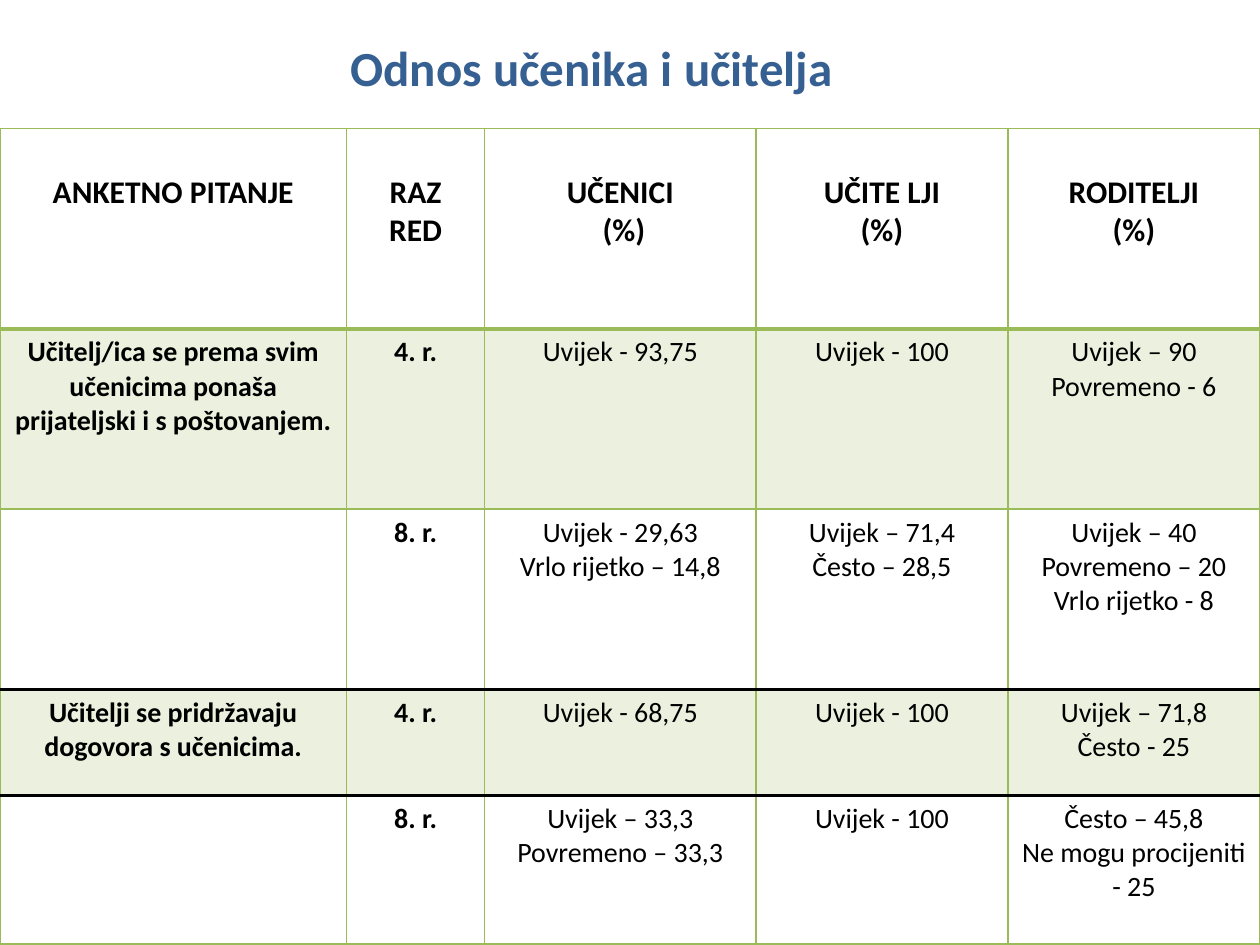
import pptx
import pptx.dml.color
import pptx.enum.text
import pptx.oxml
import pptx.oxml.ns
import pptx.util

Pt = pptx.util.Pt
RGBColor = pptx.dml.color.RGBColor

BLUE = RGBColor(0x37, 0x60, 0x92)
GREEN = RGBColor(0x9B, 0xBB, 0x59)
PALE_GREEN = RGBColor(0xEB, 0xF1, 0xDE)
BLACK = RGBColor(0, 0, 0)
FONT = "Calibri"

COLUMN_WIDTHS = [198, 79, 155, 144, 144]
ROW_HEIGHTS = [114.5, 103, 103, 60.5, 85]
ROWS = [
    ["ANKETNO PITANJE", "RAZ\nRED", "UČENICI\n (%)", "UČITE LJI\n(%)", "RODITELJI\n(%)"],
    ["Učitelj/ica se prema svim učenicima ponaša prijateljski i s poštovanjem.",
     "4. r.", "Uvijek - 93,75", "Uvijek - 100", "Uvijek – 90\nPovremeno - 6"],
    ["", "8. r.", "Uvijek - 29,63\nVrlo rijetko – 14,8", "Uvijek – 71,4\nČesto – 28,5",
     "Uvijek – 40\nPovremeno – 20\nVrlo rijetko - 8"],
    ["Učitelji se pridržavaju dogovora s učenicima.",
     "4. r.", "Uvijek - 68,75", "Uvijek - 100", "Uvijek – 71,8\nČesto - 25"],
    ["", "8. r.", "Uvijek – 33,3\nPovremeno – 33,3", "Uvijek - 100",
     "Često – 45,8\nNe mogu procijeniti - 25"],
]
SHADED_ROWS = (1, 3)

# Colour and width of each horizontal rule, from the top edge down
THIN = (GREEN, 1)
RULES = [THIN, (GREEN, 2), THIN, (BLACK, 2.25), (BLACK, 2.25), THIN]


def style_paragraph(para, size, color, bold):
    para.alignment = pptx.enum.text.PP_ALIGN.CENTER
    para.font.name = FONT
    para.font.size = Pt(size)
    para.font.color.rgb = color
    para.font.bold = bold


def add_title(page, text):
    title = page.shapes.title
    title.left, title.top, title.width, title.height = Pt(188), Pt(18), Pt(300), Pt(41)
    frame = title.text_frame
    frame.text = text
    frame.word_wrap = False
    frame.auto_size = pptx.enum.text.MSO_AUTO_SIZE.SHAPE_TO_FIT_TEXT
    style_paragraph(frame.paragraphs[0], 28, BLUE, True)


def set_borders(cell, top, bottom):
    properties = cell._tc.get_or_add_tcPr()
    sides = [("lnL", THIN), ("lnR", THIN), ("lnT", top), ("lnB", bottom)]
    for position, (tag, (color, width)) in enumerate(sides):
        line = pptx.oxml.parse_xml(
            f'<a:{tag} {pptx.oxml.ns.nsdecls("a")} w="{Pt(width)}">'
            f'<a:solidFill><a:srgbClr val="{color}"/></a:solidFill></a:{tag}>')
        properties.insert(position, line)


def fill_cell(cell, text, row, column):
    is_header = row == 0
    if row in SHADED_ROWS:
        cell.fill.solid()
        cell.fill.fore_color.rgb = PALE_GREEN
    else:
        cell.fill.background()
    set_borders(cell, RULES[row], RULES[row + 1])
    if is_header:
        cell.margin_top = Pt(25.6)
    if text:
        cell.text_frame.text = text
        for para in cell.text_frame.paragraphs:
            style_paragraph(para, 18 if is_header else 16, BLACK, is_header or column < 2)


def add_survey_table(page):
    frame = page.shapes.add_table(len(ROWS), len(COLUMN_WIDTHS), Pt(0), Pt(73.5),
                                  Pt(sum(COLUMN_WIDTHS)), Pt(sum(ROW_HEIGHTS)))
    table = frame.table
    table.first_row = False
    table.horz_banding = False
    for column, width in zip(table.columns, COLUMN_WIDTHS):
        column.width = Pt(width)
    for row, height in zip(table.rows, ROW_HEIGHTS):
        row.height = Pt(height)
    for row, texts in enumerate(ROWS):
        for column, text in enumerate(texts):
            fill_cell(table.cell(row, column), text, row, column)


def main():
    deck = pptx.Presentation()
    deck.slide_width, deck.slide_height = Pt(720), Pt(540)
    page = deck.slides.add_slide(deck.slide_layouts[5])  # title only
    add_title(page, "Odnos učenika i učitelja")
    add_survey_table(page)
    deck.save("out.pptx")


if __name__ == "__main__":
    main()
